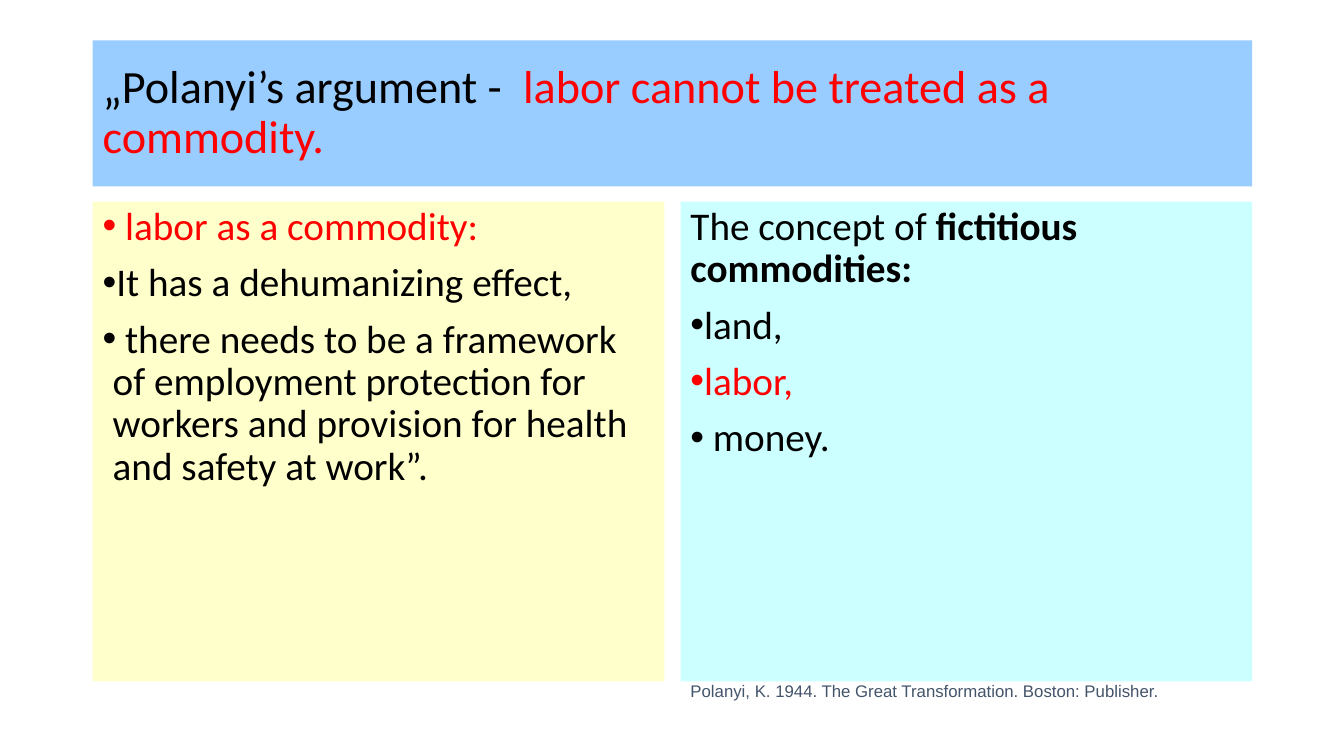
from pptx import Presentation
from pptx import util as u
from pptx.dml.color import RGBColor
from pptx.enum import shapes, text
from lxml import etree

BLACK, RED, SLATE = "000000", "FF0000", "44546A"
LEFT, GAP, COL = 0.92, 0.16, 5.67
RIGHT = LEFT + COL + GAP
WIDTH = 2 * COL + GAP


def rgb(value):
    return RGBColor.from_string(value)


def write(s, paragraphs, size, name="Calibri", anchor="TOP", **spacing):
    """Fill s with paragraphs, each a bullet flag and (text, colour, bold) runs."""
    tf = s.text_frame
    tf.word_wrap = True
    tf.vertical_anchor = text.MSO_ANCHOR[anchor]
    for i, (bullet, runs) in enumerate(paragraphs):
        p = tf.add_paragraph() if i else tf.paragraphs[0]
        p.alignment = text.PP_ALIGN.LEFT
        for key, value in spacing.items():
            setattr(p, key, value)
        for words, colour, bold in runs:
            r = p.add_run()
            r.text = words
            r.font.color.rgb = rgb(colour)
            for key, value in {"name": name, "size": u.Pt(size), "bold": bold}.items():
                setattr(r.font, key, value)
        if bullet:
            pPr = p._p.get_or_add_pPr()
            pPr.set("marL", str(u.Inches(0.1)))
            pPr.set("indent", str(u.Inches(-0.1)))
            ns = pPr.nsmap["a"]
            etree.SubElement(pPr, f"{{{ns}}}buFont", typeface="Arial")
            etree.SubElement(pPr, f"{{{ns}}}buChar", char="•")


prs = Presentation()
prs.slide_width, prs.slide_height = u.Inches(13.33), u.Inches(7.5)
slide = prs.slides.add_slide(prs.slide_layouts[6])

title = [(False, [("„Polanyi’s argument - ", BLACK, False),
                  (" labor cannot be treated as a commodity.", RED, False)])]
effects = [
    (True, [(" labor as a commodity:", RED, False)]),
    (True, [("It has a dehumanizing effect,", BLACK, False)]),
    (True, [(" there needs to be a framework of employment protection for workers "
             "and provision for health and safety at work”.", BLACK, False)]),
]
concept = [
    (False, [("The concept of ", BLACK, False), ("fictitious commodities:", BLACK, True)]),
    (True, [("land, ", BLACK, False)]),
    (True, [("labor,", RED, False)]),
    (True, [(" money.", BLACK, False)]),
]

panels = [
    (LEFT, 0.4, WIDTH, 1.45, "99CCFF", title, 33, "MIDDLE", 0),
    (LEFT, 2, COL, 4.76, "FFFFCC", effects, 28, "TOP", 10),
    (RIGHT, 2, COL, 4.76, "CCFFFF", concept, 28, "TOP", 10),
]
for x, y, w, h, fill, paragraphs, size, anchor, before in panels:
    s = slide.shapes.add_shape(shapes.MSO_SHAPE.RECTANGLE, *map(u.Inches, (x, y, w, h)))
    s.shadow.inherit = False
    s.fill.solid()
    s.fill.fore_color.rgb = rgb(fill)
    s.line.fill.background()
    write(s, paragraphs, size, anchor=anchor, line_spacing=0.9, space_before=u.Pt(before))

citation = slide.shapes.add_textbox(*map(u.Inches, (RIGHT, 6.7, 5, 0.3)))
write(citation, [(False, [("Polanyi, K. 1944. The Great Transformation. Boston: Publisher.",
                           SLATE, False)])], 12, "Arial")

prs.save("out.pptx")
